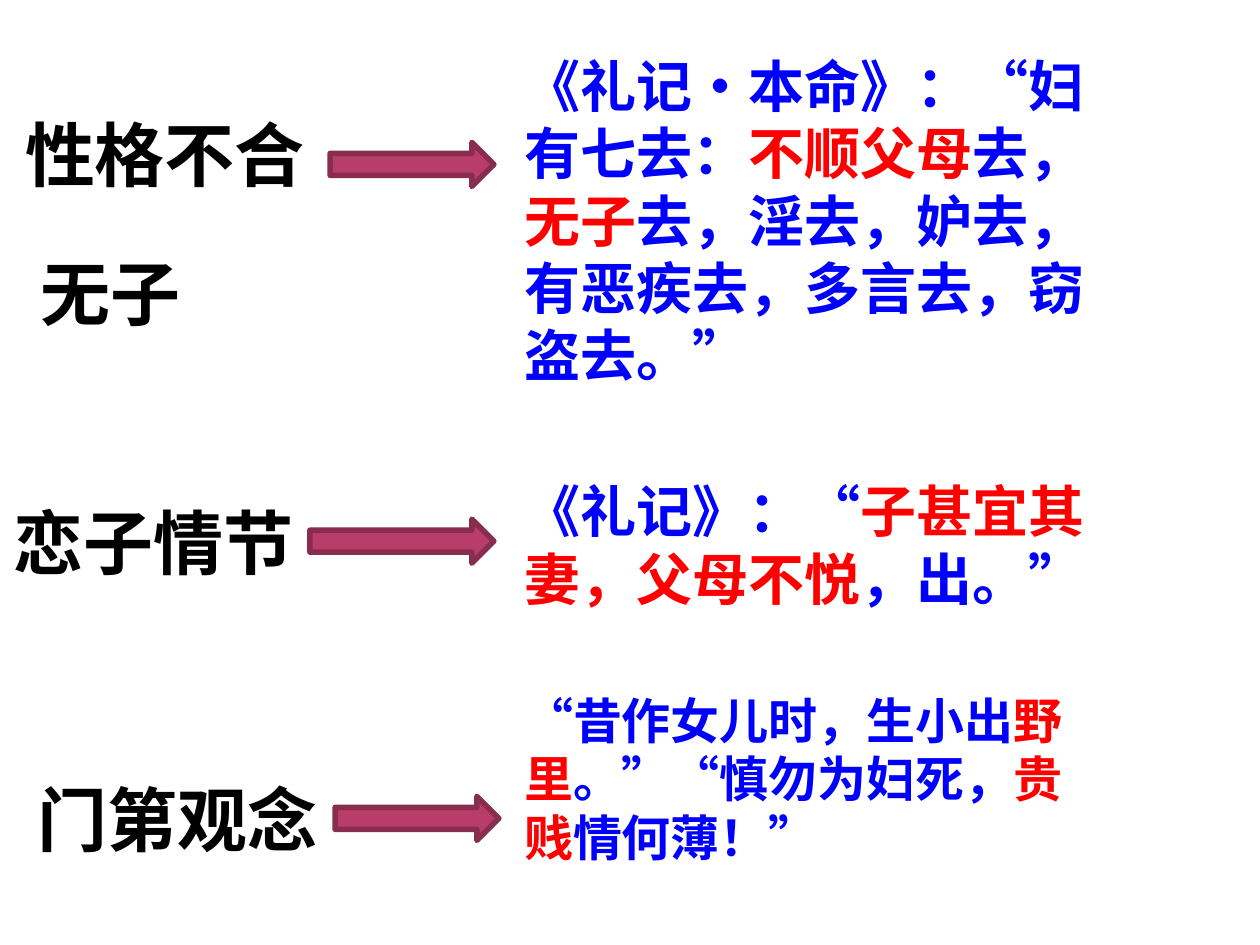
"""Build a slide that links three reasons for a divorce to classical quotations."""
from lxml.etree import SubElement
from pptx import Presentation
from pptx.dml.color import RGBColor
from pptx.enum.shapes import MSO_SHAPE as SHAPE
from pptx.enum.text import MSO_ANCHOR as ANCHOR, MSO_AUTO_SIZE as AUTO
from pptx.oxml.ns import qn
from pptx.util import Inches, Pt

BLUE, RED = "0000FF", "FF0000"


def rgb(value):
    return RGBColor.from_string(value)


def style(r, size, name, color):
    r.font.size, r.font.name, r.font.bold = Pt(size), name, True
    r.font.color.rgb = rgb(color)


prs = Presentation()
prs.slide_width, prs.slide_height = Inches(10), Inches(7.5)
s = prs.slides.add_slide(prs.slide_layouts[1])
title = s.shapes.title
title.element.getparent().remove(title.element)

quotes = [
    (32, 0, [("《礼记·本命》：“妇有七去：", BLUE), ("不顺父母", RED), ("去，", BLUE),
             ("无子", RED), ("去，淫去，妒去，有恶疾去，多言去，窃盗去。”", BLUE)]),
    (32, 51, [("《礼记》：“", BLUE), ("子甚宜其妻，父母不悦", RED), ("，出。”", BLUE)]),
    (28, 45, [("“昔作女儿时，生小出", BLUE), ("野里", RED), ("。”“慎勿为妇死，", BLUE),
              ("贵贱", RED), ("情何薄！”", BLUE)]),
]
body = s.placeholders[1]
body.left, body.top, body.width, body.height = map(Inches, (4.06, 0.36, 4.8, 6.7))
tf = body.text_frame
tf.word_wrap, tf.auto_size, tf.vertical_anchor = True, AUTO.NONE, ANCHOR.TOP
tf.margin_top = Inches(0.05)
for i, (size, gap, parts) in enumerate(quotes):
    p = tf.paragraphs[0] if i == 0 else tf.add_paragraph()
    p.line_spacing, p.space_before = Pt(size * 1.2), Pt(gap)
    pPr = p._p.get_or_add_pPr()
    pPr.set("marL", "0")
    pPr.set("indent", "0")
    SubElement(pPr, qn("a:buNone"))
    for text, color in parts:
        r = p.add_run()
        r.text = text
        style(r, size, "Noto Sans CJK SC", color)

labels = [("性格不合", 0.1, 0.83, 2.45), ("无子", 0.22, 1.94, 1.72),
          ("恋子情节", 0.01, 3.91, 2.45), ("门第观念", 0.2, 6.11, 2.45)]
for text, left, top, width in labels:
    sp = s.shapes.add_textbox(Inches(left), Inches(top), Inches(width), Inches(0.77))
    tf = sp.text_frame
    tf.text = text
    tf.word_wrap, tf.vertical_anchor = False, ANCHOR.MIDDLE
    style(tf.paragraphs[0].runs[0], 40, "Arial", "000000")

for left, top, width in [(2.62, 1.13, 1.3), (2.46, 4.12, 1.46), (2.66, 6.32, 1.3)]:
    sp = s.shapes.add_shape(SHAPE.RIGHT_ARROW, Inches(left), Inches(top),
                            Inches(width), Inches(0.35))
    sp.shadow.inherit = False
    sp.fill.solid()
    sp.fill.fore_color.rgb = rgb("B83D68")
    sp.line.color.rgb = rgb("882D4D")
    sp.line.width = Pt(3.15)

prs.save("out.pptx")
